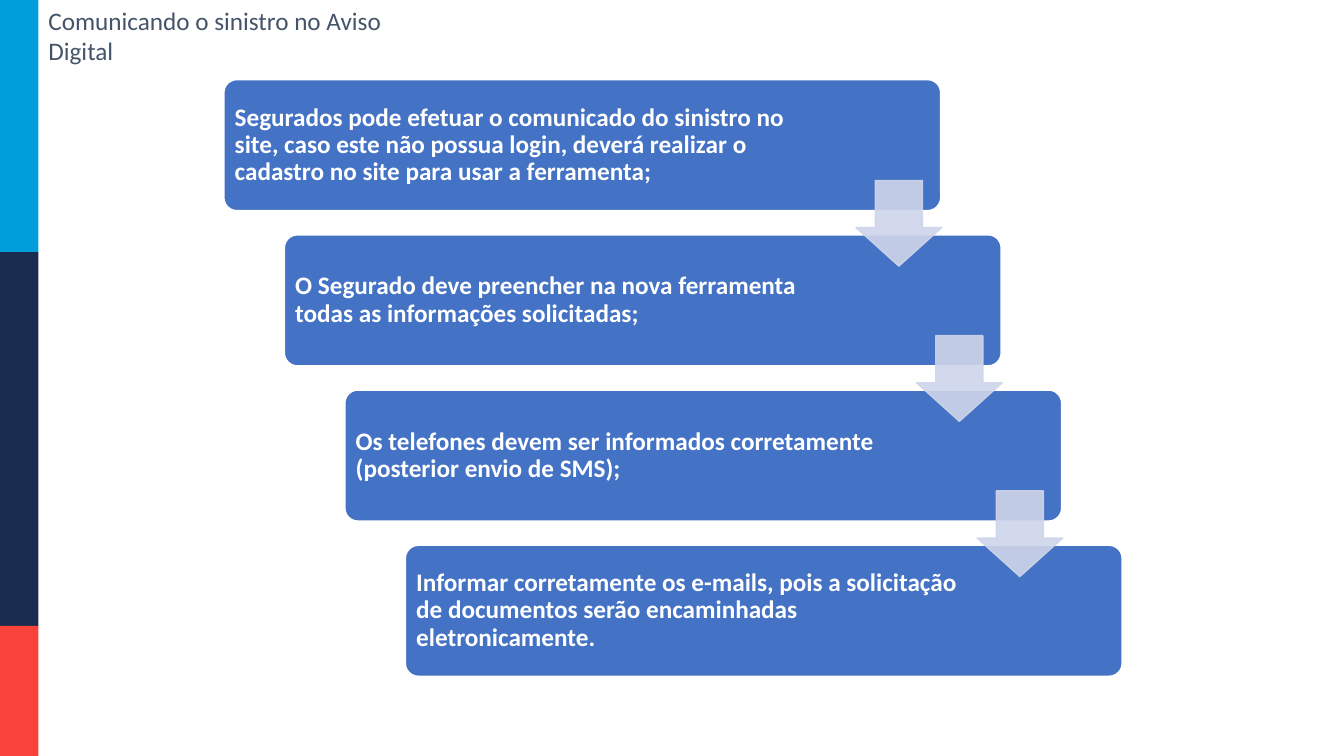
"""Build the slide on reporting a claim through the digital notice."""
from dataclasses import dataclass

import pptx
import pptx.dml.color
import pptx.enum.shapes
import pptx.enum.text
import pptx.oxml.ns
import pptx.util
from lxml import etree

Inches = pptx.util.Inches
ShapeKind = pptx.enum.shapes.MSO_SHAPE
Anchor = pptx.enum.text.MSO_ANCHOR

TITLE = "Comunicando o sinistro no Aviso Digital"
STEPS = [
    "Segurados pode efetuar o comunicado do sinistro no site, caso este não possua login, "
    "deverá realizar o cadastro no site para usar a ferramenta;",
    "O Segurado deve preencher na nova ferramenta todas as informações solicitadas;",
    "Os telefones devem ser informados corretamente (posterior envio de SMS);",
    "Informar corretamente os e-mails, pois a solicitação de documentos serão encaminhadas "
    "eletronicamente.",
]
BANDS = [("009DDB", 2.5), ("192C50", 3.71), ("F9423A", 1.29)]


@dataclass(frozen=True)
class Theme:
    """Colours and type of the slide."""

    font: str = "Calibri"
    size: int = 18
    title: str = "44546A"
    card: str = "4472C4"
    light: str = "FFFFFF"
    arrow: str = "CFD5EA"
    arrow_opacity: int = 90


THEME = Theme()
BAND_WIDTH = 0.38
CARD_LEFT, CARD_TOP, CARD_WIDTH, CARD_HEIGHT = 2.22, 0.79, 7.11, 1.3
STEP_X, STEP_Y = 0.6, 1.54
ARROW_LEFT, ARROW_TOP, ARROW_SIZE = 8.49, 1.79, 0.85
CARD_INSET, CARD_RIGHT_INSET = 0.07, 1.51


def rgb(colour):
    """Turn a hex string into a colour."""
    return pptx.dml.color.RGBColor.from_string(colour)


def add_shape(slide, kind, box, fill, line=None):
    """Add a flat filled shape, with an outline when a line colour is given."""
    shape = slide.shapes.add_shape(kind, *map(Inches, box))
    shape.shadow.inherit = False
    shape.fill.solid()
    shape.fill.fore_color.rgb = rgb(fill)
    if line:
        shape.line.color.rgb = rgb(line)
        shape.line.width = pptx.util.Pt(1)
    else:
        shape.line.fill.background()
    return shape


def write(paragraph, text, colour, bold=False):
    """Write one left-aligned run."""
    paragraph.alignment = pptx.enum.text.PP_ALIGN.LEFT
    run = paragraph.add_run()
    run.text = text
    run.font.name = THEME.font
    run.font.size = pptx.util.Pt(THEME.size)
    run.font.bold = bold
    run.font.color.rgb = rgb(colour)


def add_bands(slide):
    """Stack the coloured bands down the left edge."""
    top = 0
    for colour, height in BANDS:
        add_shape(slide, ShapeKind.RECTANGLE, (0, top, BAND_WIDTH, height), colour)
        top += height


def add_title(slide):
    """Place the title beside the bands."""
    title = slide.shapes.title
    title.left, title.top, title.width, title.height = map(Inches, (BAND_WIDTH, 0, 4.2, 0.4))
    frame = title.text_frame
    frame.word_wrap = True
    frame.auto_size = pptx.enum.text.MSO_AUTO_SIZE.SHAPE_TO_FIT_TEXT
    frame.vertical_anchor = Anchor.TOP
    write(frame.paragraphs[0], TITLE, THEME.title)


def add_card(slide, index, text):
    """Add one step of the staircase."""
    box = (CARD_LEFT + index * STEP_X, CARD_TOP + index * STEP_Y, CARD_WIDTH, CARD_HEIGHT)
    card = add_shape(slide, ShapeKind.ROUNDED_RECTANGLE, box, THEME.card, THEME.light)
    card.adjustments[0] = 0.1
    frame = card.text_frame
    frame.word_wrap = True
    frame.vertical_anchor = Anchor.MIDDLE
    frame.margin_left = frame.margin_top = frame.margin_bottom = Inches(CARD_INSET)
    frame.margin_right = Inches(CARD_RIGHT_INSET)
    paragraph = frame.paragraphs[0]
    paragraph.line_spacing = 0.9
    write(paragraph, text, THEME.light, bold=True)


def add_arrow(slide, index):
    """Add the translucent arrow from one step to the next."""
    box = (ARROW_LEFT + index * STEP_X, ARROW_TOP + index * STEP_Y, ARROW_SIZE, ARROW_SIZE)
    arrow = add_shape(slide, ShapeKind.DOWN_ARROW, box, THEME.arrow, THEME.arrow)
    arrow.adjustments[0] = 0.55
    arrow.adjustments[1] = 0.45
    properties = arrow.element.spPr
    for colour in properties.iter(pptx.oxml.ns.qn("a:srgbClr")):
        alpha = etree.SubElement(colour, pptx.oxml.ns.qn("a:alpha"))
        alpha.set("val", str(THEME.arrow_opacity * 1000))


def main():
    """Assemble and save the presentation."""
    presentation = pptx.Presentation()
    presentation.slide_width = Inches(13.33)
    presentation.slide_height = Inches(7.5)
    slide = presentation.slides.add_slide(presentation.slide_layouts.get_by_name("Title Only"))
    add_bands(slide)
    add_title(slide)
    for index, text in enumerate(STEPS):
        add_card(slide, index, text)
    for index in range(len(STEPS) - 1):
        add_arrow(slide, index)
    presentation.save("out.pptx")


if __name__ == "__main__":
    main()
